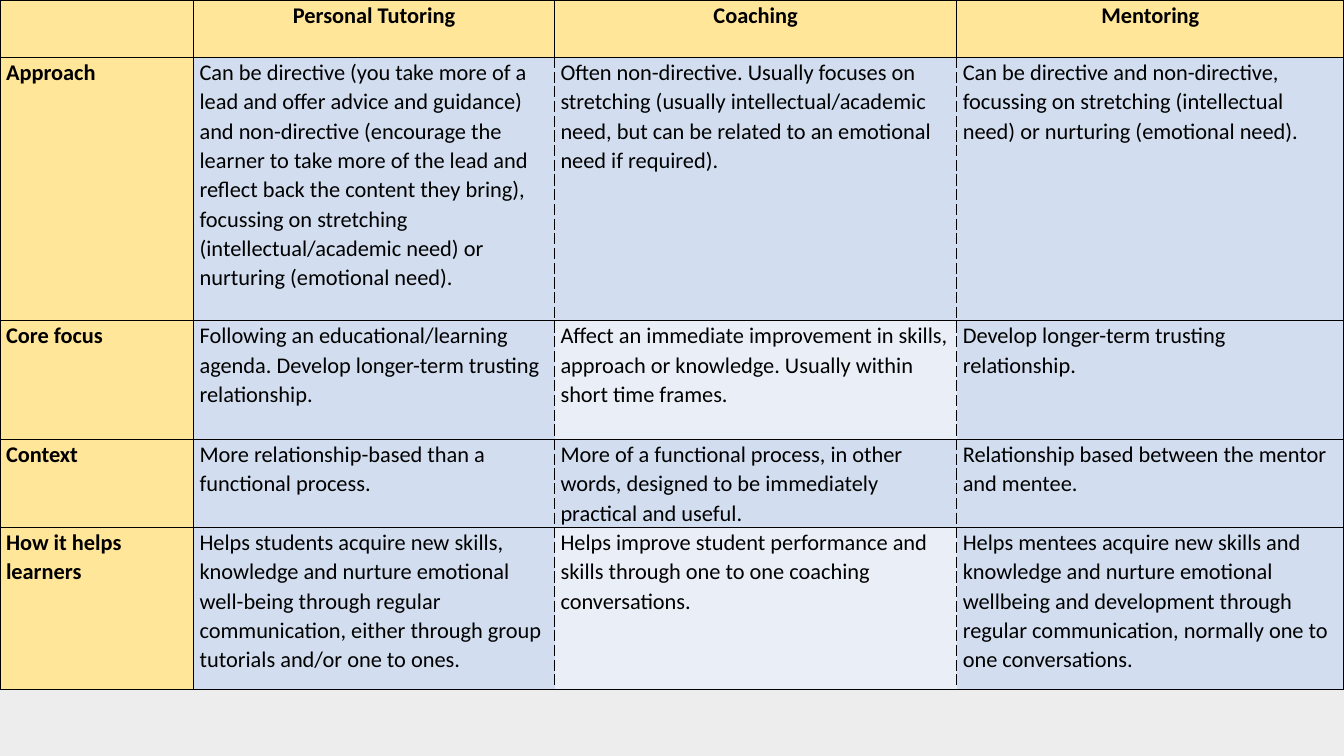
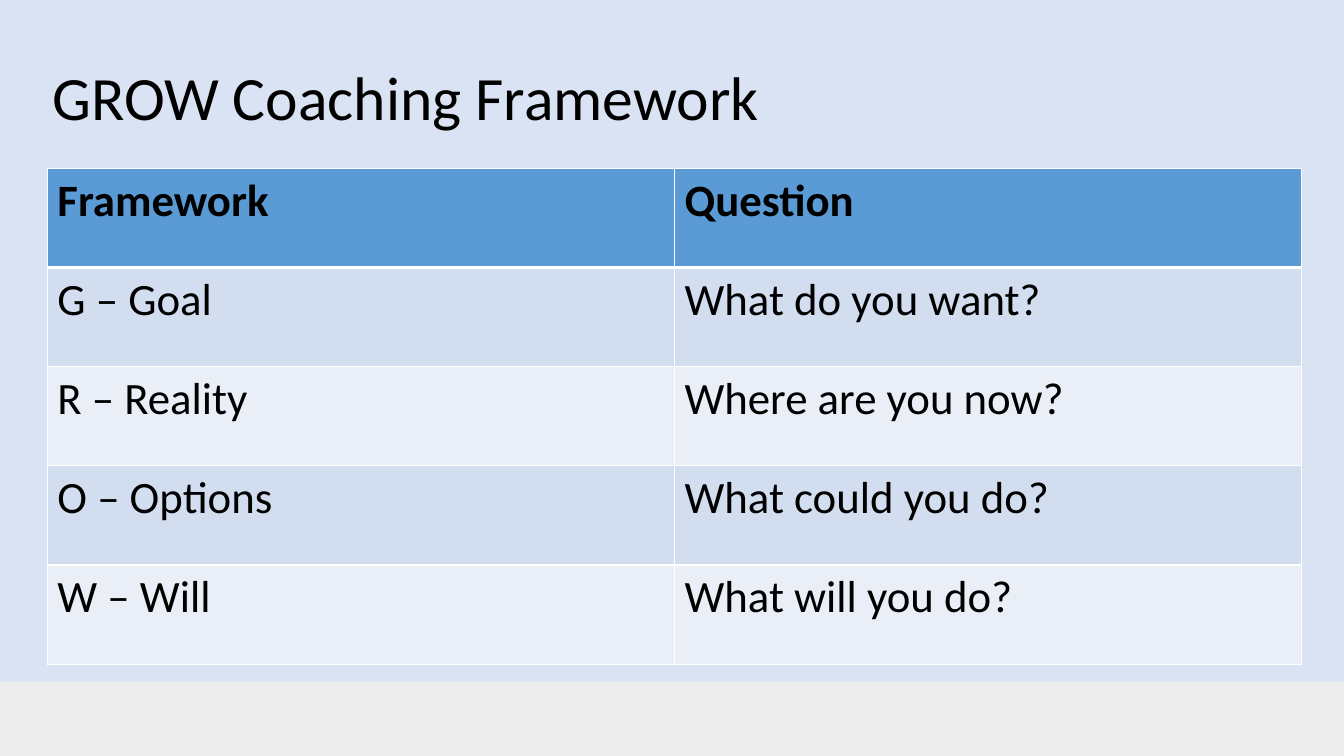
"""Build two slides: a tutoring comparison and the GROW coaching framework."""
from lxml import etree
from pptx import Presentation
from pptx import util as u
from pptx.dml.color import RGBColor
from pptx.enum import shapes, text
from pptx.oxml.ns import qn

COLOURS = {
    "page": "DAE3F3", "band": "EDEDED", "text": "000000", "line": "000000",
    "label": "FFE699", "dark": "D2DEEF", "light": "EAEFF7",
    "header": "5B9BD5", "grid": "FFFFFF",
}
FONT = "Calibri"


def format_cell(cell, content, fill, borders, font, align="LEFT", spacing=1.0, inset=None):
    """Write one cell; borders maps each edge to (colour, points, dash)."""
    for edge, (colour, points, dash) in borders.items():
        line = etree.SubElement(cell._tc.get_or_add_tcPr(), qn("a:ln" + edge), w=str(u.Pt(points)))
        solid = etree.SubElement(line, qn("a:solidFill"))
        etree.SubElement(solid, qn("a:srgbClr"), val=COLOURS[colour])
        etree.SubElement(line, qn("a:prstDash"), val=dash)
    cell.fill.solid()
    cell.fill.fore_color.rgb = RGBColor.from_string(COLOURS[fill])
    if inset is not None:
        cell.margin_left = cell.margin_right = u.Inches(inset)
        cell.margin_top = cell.margin_bottom = 0
    cell.text = content
    format_para(cell.text_frame.paragraphs[0], font, align, spacing)


def format_para(para, font, align="LEFT", spacing=1.0):
    """Give a paragraph its alignment, spacing and font values."""
    para.alignment = text.PP_ALIGN[align]
    para.line_spacing = spacing
    para.font.color.rgb = RGBColor.from_string(COLOURS["text"])
    for name, value in {"name": FONT, **font}.items():
        setattr(para.font, name, value)


deck = Presentation()
deck.slide_width, deck.slide_height = u.Inches(13.33), u.Inches(7.5)
master = deck.slide_master
master.background.fill.solid()
master.background.fill.fore_color.rgb = RGBColor.from_string(COLOURS["page"])

comparison_page = deck.slides.add_slide(deck.slide_layouts.get_by_name("Blank"))
grow_page = deck.slides.add_slide(deck.slide_layouts.get_by_name("Title Only"))

band = comparison_page.shapes.add_shape(
    shapes.MSO_SHAPE.RECTANGLE, 0, u.Inches(6.76), deck.slide_width, u.Inches(0.74))
band.shadow.inherit = False
band.fill.solid()
band.fill.fore_color.rgb = RGBColor.from_string(COLOURS["band"])
band.line.fill.background()
master.shapes.element.insert(2, band.element)

comparison = [
    ["", "Personal Tutoring", "Coaching", "Mentoring"],
    ["Approach",
     "Can be directive (you take more of a lead and offer advice and guidance) and "
     "non-directive (encourage the learner to take more of the lead and reflect back the "
     "content they bring), focussing on stretching (intellectual/academic need) or "
     "nurturing (emotional need).",
     "Often non-directive. Usually focuses on stretching (usually intellectual/academic "
     "need, but can be related to an emotional need if required).",
     "Can be directive and non-directive, focussing on stretching (intellectual need) or "
     "nurturing (emotional need)."],
    ["Core focus",
     "Following an educational/learning agenda. Develop longer-term trusting relationship.",
     "Affect an immediate improvement in skills, approach or knowledge. Usually within "
     "short time frames.",
     "Develop longer-term trusting relationship."],
    ["Context",
     "More relationship-based than a functional process.",
     "More of a functional process, in other words, designed to be immediately practical "
     "and useful.",
     "Relationship based between the mentor and mentee."],
    ["How it helps learners",
     "Helps students acquire new skills, knowledge and nurture emotional well-being "
     "through regular communication, either through group tutorials and/or one to ones.",
     "Helps improve student performance and skills through one to one coaching "
     "conversations.",
     "Helps mentees acquire new skills and knowledge and nurture emotional wellbeing and "
     "development through regular communication, normally one to one conversations."],
]
widths = [1.92, 3.58, 3.99, 3.84]
heights = [0.57, 2.61, 1.18, 0.86, 1.61]
table = comparison_page.shapes.add_table(
    len(heights), len(widths), 0, 0, u.Inches(sum(widths)), u.Inches(sum(heights))).table
for column, width in zip(table.columns, widths):
    column.width = u.Inches(width)
for row, height in zip(table.rows, heights):
    row.height = u.Inches(height)

solid_line, dashed_line = ("line", 1, "solid"), ("line", 1, "lgDash")
for r, row in enumerate(comparison):
    for c, content in enumerate(row):
        is_label = r == 0 or c == 0
        fill = "label" if is_label else "light" if c == 2 and r % 2 == 0 else "dark"
        borders = {
            "L": dashed_line if r and c > 1 else solid_line,
            "R": dashed_line if r and c in (1, 2) else solid_line,
            "T": solid_line,
            "B": solid_line,
        }
        format_cell(table.cell(r, c), content, fill, borders,
                    {"size": u.Pt(16), "bold": is_label},
                    "CENTER" if r == 0 else "LEFT", 1.07, 0.06)

title = grow_page.shapes.title
box = {"left": 0.42, "top": 0.6, "width": 12.5, "height": 0.78}
for name, value in box.items():
    setattr(title, name, u.Inches(value))
title.text = "GROW Coaching Framework"
title.text_frame.vertical_anchor = text.MSO_ANCHOR.BOTTOM
title.text_frame.auto_size = text.MSO_AUTO_SIZE.NONE
format_para(title.text_frame.paragraphs[0], {"size": u.Pt(44)}, spacing=0.9)

framework = [
    ("Framework", "Question"),
    ("G – Goal", "What do you want?"),
    ("R – Reality", "Where are you now?"),
    ("O – Options", "What could you do?"),
    ("W – Will", "What will you do?"),
]
table = grow_page.shapes.add_table(
    len(framework), 2, u.Inches(0.47), u.Inches(1.67), u.Inches(12.44), u.Inches(4.92)).table
thin_line, thick_line = ("grid", 1, "solid"), ("grid", 3, "solid")
for r, row in enumerate(framework):
    fill = "header" if r == 0 else "dark" if r % 2 else "light"
    borders = {
        "L": thin_line,
        "R": thin_line,
        "T": thick_line if r == 1 else thin_line,
        "B": thick_line if r == 0 else thin_line,
    }
    for c, content in enumerate(row):
        format_cell(table.cell(r, c), content, fill, borders,
                    {"size": u.Pt(32), "bold": r == 0})

deck.save("out.pptx")
